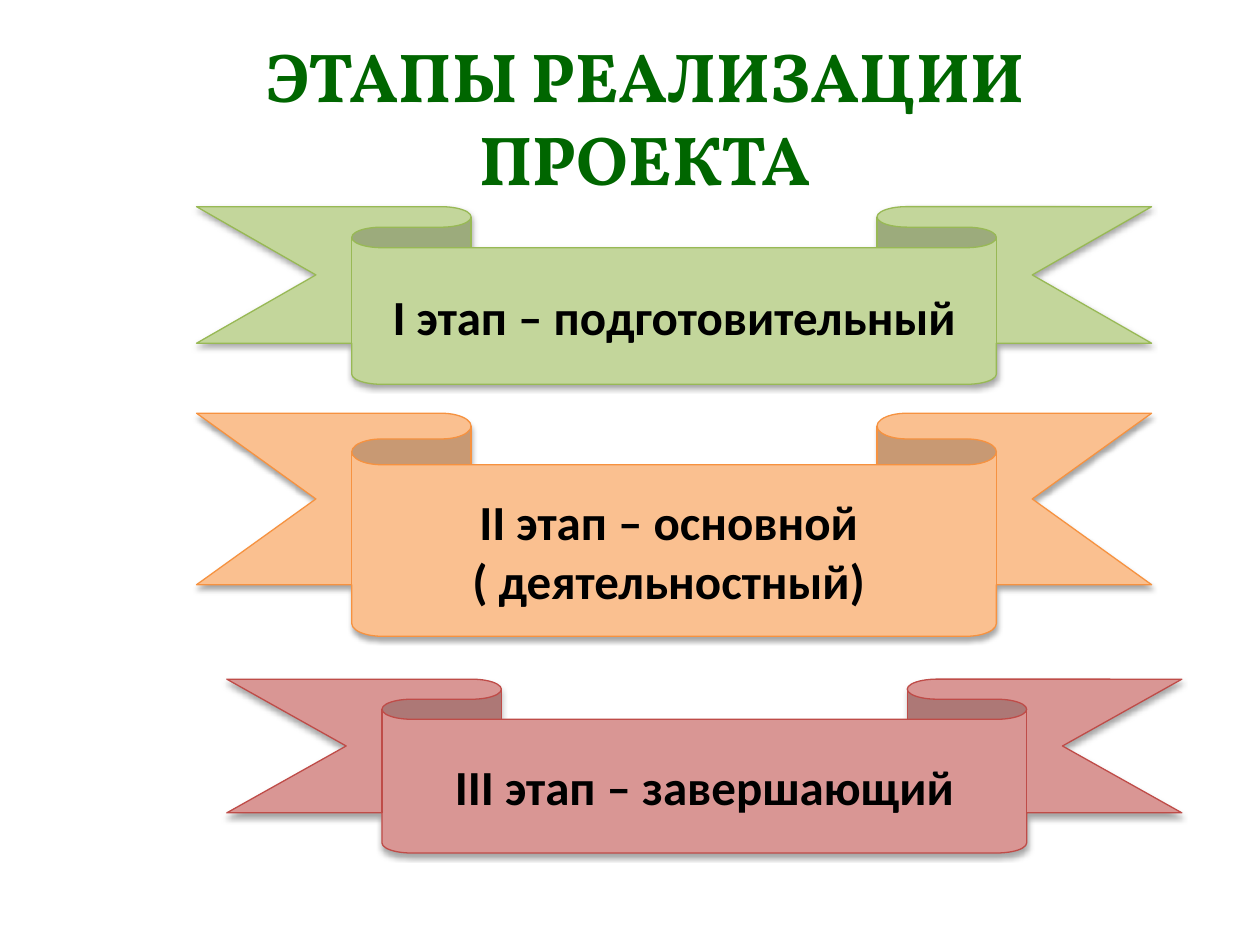
import pptx
import pptx.util
import pptx.dml.color
import pptx.enum.shapes
import pptx.enum.text
import pptx.oxml
import pptx.oxml.ns
from pptx.util import Inches

SHADOW = (
    f'<a:outerShdw {pptx.oxml.ns.nsdecls("a")} blurRad="39370" dist="22860" '
    'dir="5400000" rotWithShape="0"><a:srgbClr val="000000">'
    '<a:alpha val="35000"/></a:srgbClr></a:outerShdw>'
)


def rgb(value):
    return pptx.dml.color.RGBColor.from_string(value)


def format_paragraph(p, font, size, color):
    p.alignment = pptx.enum.text.PP_ALIGN.CENTER
    p.font.name = font
    p.font.size = pptx.util.Pt(size)
    p.font.bold = True
    p.font.color.rgb = rgb(color)


prs = pptx.Presentation()
prs.slide_width, prs.slide_height = Inches(10), Inches(7.5)
s = prs.slides.add_slide(prs.slide_layouts[5])

title = s.shapes.title
title.left, title.top = Inches(1.3), Inches(0.3)
title.width, title.height = Inches(7.64), Inches(1.25)
tf = title.text_frame
tf.text = "ЭТАПЫ РЕАЛИЗАЦИИ ПРОЕКТА"
tf.word_wrap = True
tf.auto_size = pptx.enum.text.MSO_AUTO_SIZE.NONE
tf.vertical_anchor = pptx.enum.text.MSO_ANCHOR.MIDDLE
format_paragraph(tf.paragraphs[0], "Vollkorn", 39.6, "006600")

# left, top, height, fill, line, text
stages = [
    (1.56, 1.64, 1.41, "C3D69B", "98B955", "I этап – подготовительный"),
    (1.56, 3.28, 1.77, "FAC090", "F69240", "II этап – основной \n( деятельностный) "),
    (1.8, 5.39, 1.38, "D99694", "BF4C48", "III этап – завершающий"),
]
for left, top, height, fill, line, text in stages:
    sp = s.shapes.add_shape(
        pptx.enum.shapes.MSO_SHAPE.DOWN_RIBBON,
        Inches(left), Inches(top), Inches(7.58), Inches(height))
    sp.adjustments[0] = 0.231
    sp.adjustments[1] = 0.675
    sp.fill.solid()
    sp.fill.fore_color.rgb = rgb(fill)
    sp.line.color.rgb = rgb(line)
    sp.line.width = pptx.util.Pt(0.75)
    sp.shadow.inherit = False
    effects = sp.element.spPr.find(pptx.oxml.ns.qn("a:effectLst"))
    effects.append(pptx.oxml.parse_xml(SHADOW))

    tf = sp.text_frame
    tf.word_wrap = True
    tf.vertical_anchor = pptx.enum.text.MSO_ANCHOR.MIDDLE
    tf.text = text
    for p in tf.paragraphs:
        format_paragraph(p, "Calibri", 28, "000000")

prs.save("out.pptx")
